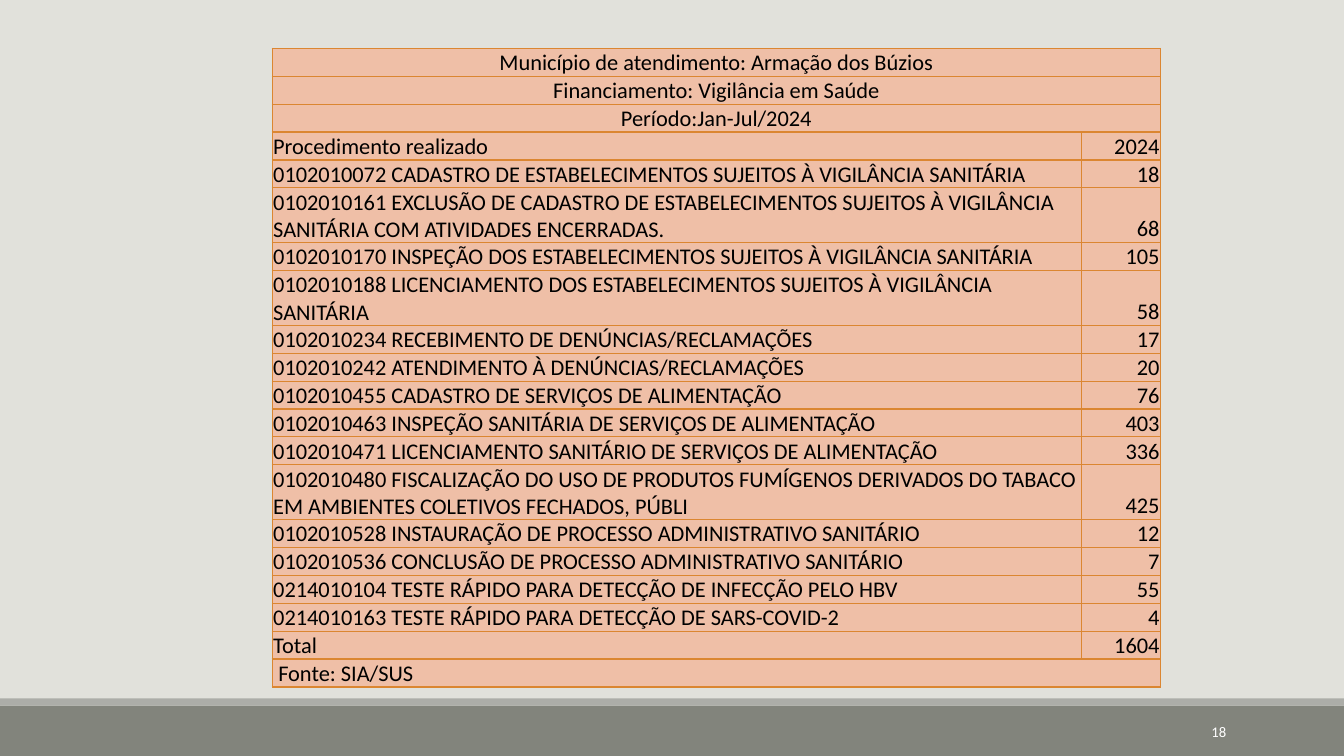
from lxml.etree import SubElement
from pptx import Presentation
from pptx.dml.color import RGBColor
from pptx.enum.shapes import MSO_SHAPE
from pptx.enum.text import MSO_ANCHOR, PP_ALIGN
from pptx.oxml.ns import qn
from pptx.util import Inches, Pt

COLORS = {
    "background": "E1E1DB",
    "footer": "82847C",
    "footer_edge": "ACADA8",
    "cell": "EFBFA7",
    "border": "DB8631",
    "text": "000000",
    "number": "FFFFFF",
}

HEADINGS = [
    "Município de atendimento: Armação dos Búzios",
    "Financiamento: Vigilância em Saúde",
    "Período:Jan-Jul/2024",
]
PROCEDURES = [
    ("Procedimento realizado", "2024"),
    ("0102010072 CADASTRO DE ESTABELECIMENTOS SUJEITOS À VIGILÂNCIA SANITÁRIA", "18"),
    ("0102010161 EXCLUSÃO DE CADASTRO DE ESTABELECIMENTOS SUJEITOS À VIGILÂNCIA "
     "SANITÁRIA COM ATIVIDADES ENCERRADAS.", "68"),
    ("0102010170 INSPEÇÃO DOS ESTABELECIMENTOS SUJEITOS À VIGILÂNCIA SANITÁRIA", "105"),
    ("0102010188 LICENCIAMENTO DOS ESTABELECIMENTOS SUJEITOS À VIGILÂNCIA SANITÁRIA", "58"),
    ("0102010234 RECEBIMENTO DE DENÚNCIAS/RECLAMAÇÕES", "17"),
    ("0102010242 ATENDIMENTO À DENÚNCIAS/RECLAMAÇÕES", "20"),
    ("0102010455 CADASTRO DE SERVIÇOS DE ALIMENTAÇÃO", "76"),
    ("0102010463 INSPEÇÃO SANITÁRIA DE SERVIÇOS DE ALIMENTAÇÃO", "403"),
    ("0102010471 LICENCIAMENTO SANITÁRIO DE SERVIÇOS DE ALIMENTAÇÃO", "336"),
    ("0102010480 FISCALIZAÇÃO DO USO DE PRODUTOS FUMÍGENOS DERIVADOS DO TABACO "
     "EM AMBIENTES COLETIVOS FECHADOS, PÚBLI", "425"),
    ("0102010528 INSTAURAÇÃO DE PROCESSO ADMINISTRATIVO SANITÁRIO", "12"),
    ("0102010536 CONCLUSÃO DE PROCESSO ADMINISTRATIVO SANITÁRIO", "7"),
    ("0214010104 TESTE RÁPIDO PARA DETECÇÃO DE INFECÇÃO PELO HBV", "55"),
    ("0214010163 TESTE RÁPIDO PARA DETECÇÃO DE SARS-COVID-2", "4"),
    ("Total", "1604"),
]
SOURCE = " Fonte: SIA/SUS"
COLUMN_WIDTHS = (8.03, 0.78)
ROW_HEIGHT = 0.26
LINE_CAPACITY = 74  # characters that fit on one line of the first column


class SlideBuilder:
    font_name = "Calibri"

    def __init__(self, presentation):
        self.slide = presentation.slides.add_slide(presentation.slide_layouts[6])
        self.paint(self.slide.background.fill, "background")

    def paint(self, fill, color):
        fill.solid()
        fill.fore_color.rgb = RGBColor.from_string(COLORS[color])

    def style(self, paragraph, size, color, align):
        paragraph.alignment = align
        paragraph.font.name = self.font_name
        paragraph.font.size = Pt(size)
        paragraph.font.color.rgb = RGBColor.from_string(COLORS[color])

    def band(self, top, height, color):
        shape = self.slide.shapes.add_shape(
            MSO_SHAPE.RECTANGLE, 0, Inches(top), Inches(13.33), Inches(height))
        shape.shadow.inherit = False
        self.paint(shape.fill, color)
        shape.line.fill.background()

    def text(self, left, top, width, height, text, size, color, align):
        box = self.slide.shapes.add_textbox(
            Inches(left), Inches(top), Inches(width), Inches(height))
        frame = box.text_frame
        frame.word_wrap = True
        frame.vertical_anchor = MSO_ANCHOR.MIDDLE
        frame.text = text
        self.style(frame.paragraphs[0], size, color, align)

    def borders(self, cell):
        properties = cell._tc.get_or_add_tcPr()
        for index, side in enumerate(("lnL", "lnR", "lnT", "lnB")):
            line = properties.makeelement(qn(f"a:{side}"), {"w": str(Pt(1))})
            properties.insert(index, line)
            fill = SubElement(line, qn("a:solidFill"))
            SubElement(fill, qn("a:srgbClr"), val=COLORS["border"])

    def cell(self, cell, text, align):
        cell.margin_left = cell.margin_right = cell.margin_top = Inches(0.01)
        cell.margin_bottom = 0
        cell.vertical_anchor = MSO_ANCHOR.BOTTOM
        cell.text = text
        self.style(cell.text_frame.paragraphs[0], 16, "text", align)
        self.paint(cell.fill, "cell")
        self.borders(cell)

    def table(self, left, top, rows):
        """Each row is (texts, alignments); a single text spans the whole row."""
        heights = [ROW_HEIGHT * (2 if len(texts[0]) > LINE_CAPACITY else 1)
                   for texts, _ in rows]
        table = self.slide.shapes.add_table(
            len(rows), len(COLUMN_WIDTHS), Inches(left), Inches(top),
            Inches(sum(COLUMN_WIDTHS)), Inches(sum(heights))).table
        table.first_row = table.horz_banding = False
        for column, width in zip(table.columns, COLUMN_WIDTHS):
            column.width = Inches(width)
        for index, (texts, alignments) in enumerate(rows):
            table.rows[index].height = Inches(heights[index])
            for column in range(len(COLUMN_WIDTHS)):
                text = texts[column] if column < len(texts) else ""
                self.cell(table.cell(index, column), text, alignments[column])
            if len(texts) == 1:
                table.cell(index, 0).merge(table.cell(index, 1))


def main():
    presentation = Presentation()
    presentation.slide_width = Inches(13.33)
    presentation.slide_height = Inches(7.5)
    builder = SlideBuilder(presentation)

    # Footer bands and slide number
    builder.band(7, 0.5, "footer")
    builder.band(6.93, 0.07, "footer_edge")
    builder.text(10.83, 7.06, 1.43, 0.4, "18", 10.5, "number", PP_ALIGN.RIGHT)

    # Procedures table
    centered = (PP_ALIGN.CENTER, PP_ALIGN.CENTER)
    sided = (PP_ALIGN.LEFT, PP_ALIGN.RIGHT)
    rows = [((heading,), centered) for heading in HEADINGS]
    rows += [(procedure, sided) for procedure in PROCEDURES]
    rows.append(((SOURCE,), sided))
    builder.table(2.7, 0.48, rows)

    presentation.save("out.pptx")


if __name__ == "__main__":
    main()
